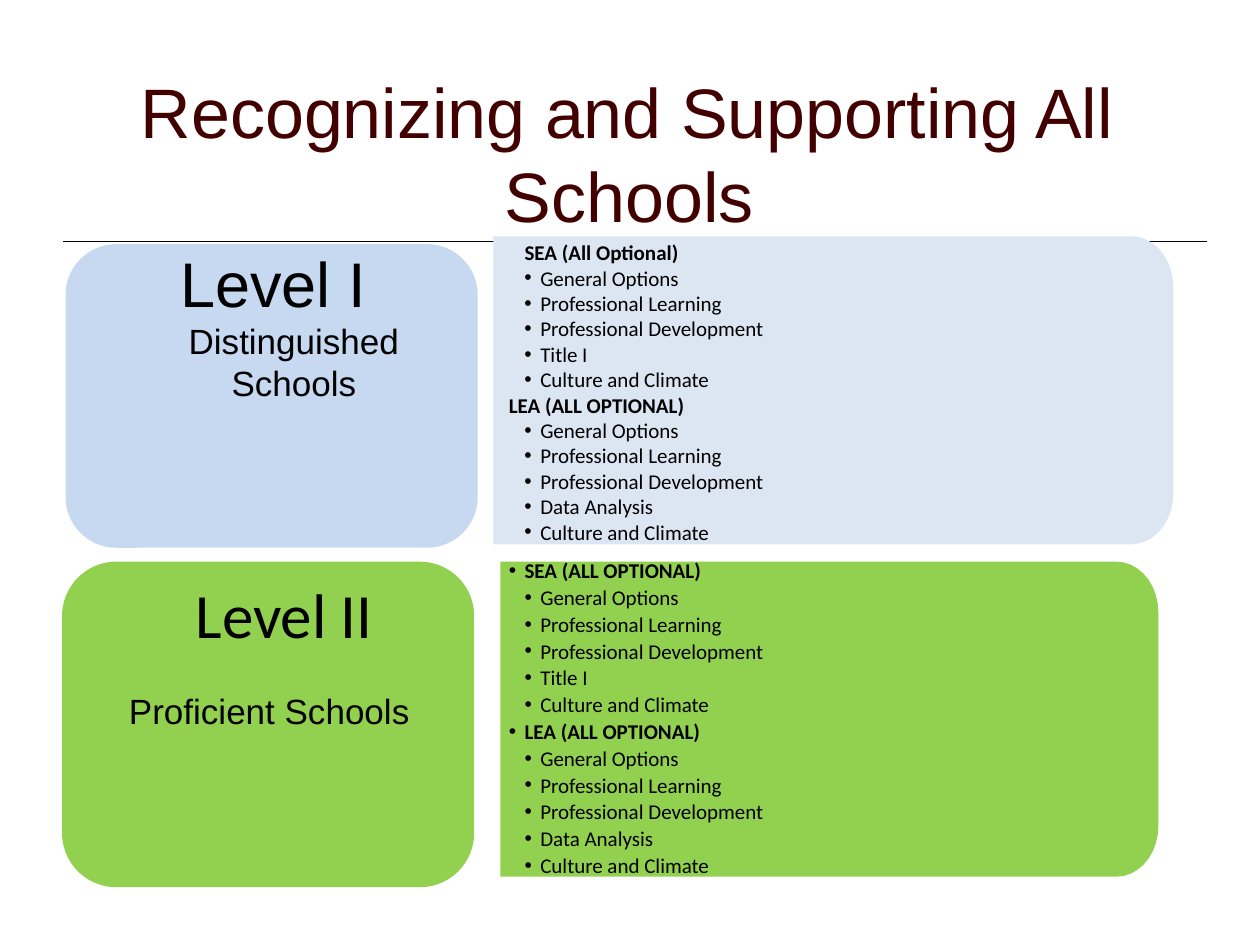
import math
import pptx
import pptx.util
import pptx.dml.color
import pptx.enum.shapes
import pptx.enum.text
import pptx.oxml
import pptx.oxml.ns
import lxml.etree

Pt = pptx.util.Pt
COLORS = {"title": "420000", "text": "000000", "sky": "C6D9F1",
          "mist": "DCE6F2", "green": "92D050"}
SHARED = ["General Options", "Professional Learning", "Professional Development"]
STATE = SHARED + ["Title I", "Culture and Climate"]
LOCAL = SHARED + ["Data Analysis", "Culture and Climate"]


def color(name):
    return pptx.dml.color.RGBColor.from_string(COLORS[name])


def paint(shape, fill):
    shape.shadow.inherit = False
    shape.fill.solid()
    shape.fill.fore_color.rgb = color(fill)
    shape.line.fill.background()


def card(slide, x, y, w, h, radius, fill):
    kind = pptx.enum.shapes.MSO_SHAPE.ROUNDED_RECTANGLE
    shape = slide.shapes.add_shape(kind, Pt(x), Pt(y), Pt(w), Pt(h))
    shape.adjustments[0] = radius / min(w, h)
    paint(shape, fill)


def panel(slide, x, y, w, h, fill):
    rx, ry = 24, 29
    turns = [math.radians(a) for a in range(0, 91, 10)]
    top = [(x + w - rx + rx * math.sin(t), y + ry - ry * math.cos(t)) for t in turns]
    low = [(px, 2 * y + h - py) for px, py in reversed(top)]
    pen = slide.shapes.build_freeform(Pt(x), Pt(y))
    pen.add_line_segments([(Pt(a), Pt(b)) for a, b in top + low + [(x, y + h)]])
    paint(pen.convert_to_shape(), fill)


def rule(slide, x, y, w):
    kind = pptx.enum.shapes.MSO_CONNECTOR.STRAIGHT
    line = slide.shapes.add_connector(kind, Pt(x), Pt(y), Pt(x + w), Pt(y))
    line.line.color.rgb = color("text")
    line.line.width = Pt(1)
    props = line._element.spPr
    lxml.etree.SubElement(props, pptx.oxml.ns.qn("a:effectLst"))


def frame(slide, x, y, w, h):
    text = slide.shapes.add_textbox(Pt(x), Pt(y), Pt(w), Pt(h)).text_frame
    text.word_wrap = True
    text.margin_left = text.margin_right = 0
    text.margin_top = text.margin_bottom = 0
    return text


def style(run, size, face, tint="text", bold=False):
    run.font.size = Pt(size)
    run.font.name = face
    run.font.bold = bold
    run.font.color.rgb = color(tint)


def indent(para, left, first, dot=False):
    props = para._p.get_or_add_pPr()
    props.set("marL", str(Pt(left)))
    props.set("indent", str(Pt(first)))
    if dot:
        font = lxml.etree.SubElement(props, pptx.oxml.ns.qn("a:buFont"))
        font.set("typeface", "Arial")
        mark = lxml.etree.SubElement(props, pptx.oxml.ns.qn("a:buChar"))
        mark.set("char", "•")


def title(slide, words):
    para = frame(slide, 80, 39, 560, 97).paragraphs[0]
    para.text = words
    para.line_spacing = Pt(48)
    indent(para, 208.5, -208)
    style(para.runs[0], 40, "Arial", "title")


def label(slide, box, parts, left, first, pitch=None):
    para = frame(slide, *box).paragraphs[0]
    para.alignment = pptx.enum.text.PP_ALIGN.CENTER
    if pitch:
        para.line_spacing = Pt(pitch)
    indent(para, left, first)
    for words, size, face in parts:
        run = para.add_run()
        run.text = words
        style(run, size, face)


def items(names):
    return [(name, 18.75, True, False) for name in names]


def bullets(slide, box, rows, gap):
    text = frame(slide, *box)
    for i, (words, left, dot, bold) in enumerate(rows):
        para = text.add_paragraph() if i else text.paragraphs[0]
        para.text = words
        para.space_before = Pt(gap if i else 0)
        indent(para, left, -9 if dot else 0, dot)
        style(para.runs[0], 12, "Calibri", bold=bold)


def main():
    deck = pptx.Presentation()
    deck.slide_width, deck.slide_height = Pt(720), Pt(540)
    slide = deck.slides.add_slide(deck.slide_layouts[6])
    rule(slide, 36, 138, 654)
    title(slide, "Recognizing and Supporting All Schools")

    panel(slide, 282, 135, 388.5, 176, "mist")
    rows = [("SEA (All Optional)", 9.75, False, True)] + items(STATE)
    rows += [("LEA (ALL OPTIONAL)", 0.75, False, True)] + items(LOCAL)
    bullets(slide, (290, 137, 160, 174), rows, 0.1)
    card(slide, 37.5, 139.5, 235.5, 173.5, 29, "sky")
    label(slide, (57.5, 139.5, 196, 92),
          [("Level I ", 36, "Arial"), ("Distinguished Schools", 20, "Arial")],
          25, -24)

    panel(slide, 286, 321, 376, 180, "green")
    bullets(slide, (290, 318.5, 113, 14),
            [("SEA (ALL OPTIONAL)", 9.75, True, True)], 0)
    rows = items(STATE) + [("LEA (ALL OPTIONAL)", 9.75, True, True)] + items(LOCAL)
    bullets(slide, (290, 334, 148, 170), rows, 0.9)
    card(slide, 35.5, 321, 235.5, 186, 31, "green")
    label(slide, (57.5, 326, 192, 86),
          [("Level II ", 36, "Calibri"), ("Proficient Schools", 20, "Arial")],
          0.75, 17, 46.1)
    deck.save("out.pptx")


if __name__ == "__main__":
    main()
